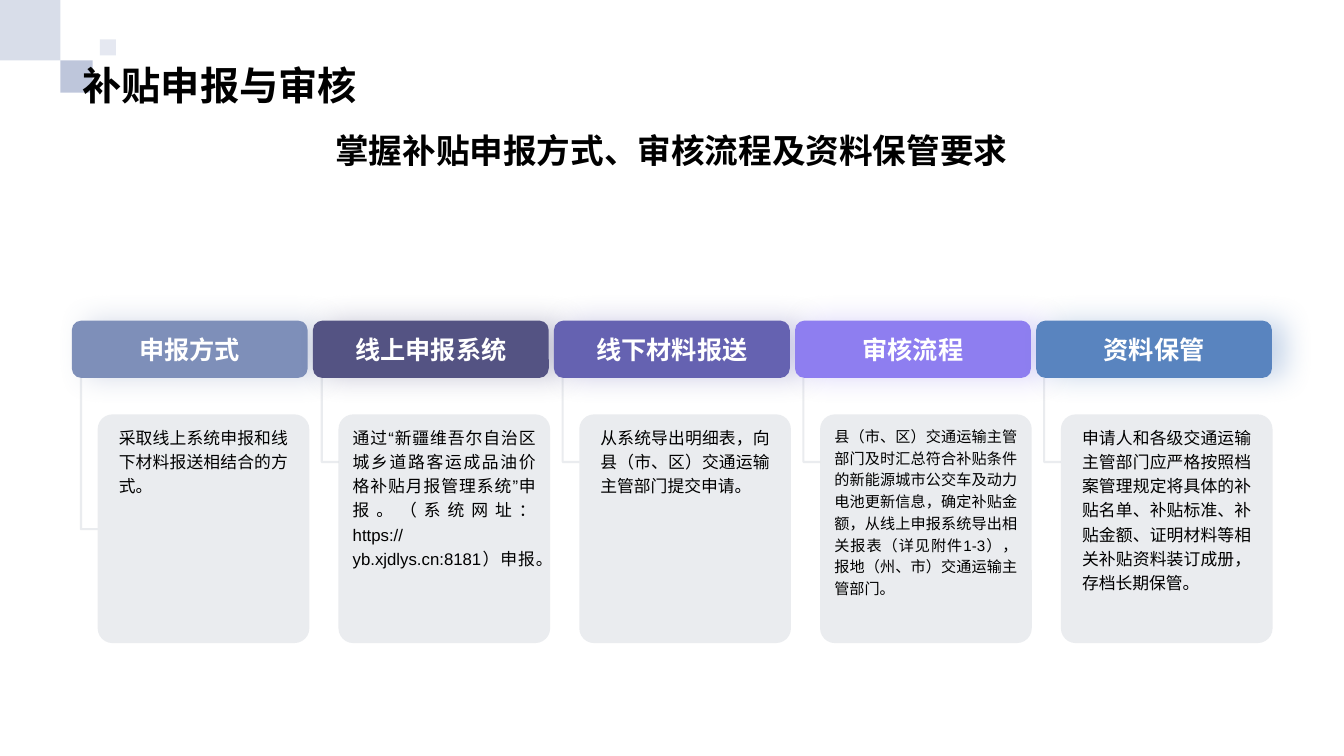
from lxml.etree import SubElement
from pptx import Presentation
from pptx.dml.color import RGBColor
from pptx.enum.shapes import MSO_CONNECTOR, MSO_SHAPE
from pptx.enum.text import MSO_ANCHOR, MSO_AUTO_SIZE, PP_ALIGN
from pptx.oxml.ns import qn
from pptx.util import Pt


def paint(color_format, color, alpha=100):
    color_format.rgb = RGBColor.from_string(color)
    if alpha < 100:
        node = color_format._xFill.find(qn("a:srgbClr"))
        SubElement(node, qn("a:alpha"), val=str(alpha * 1000))


def write(shape, text, size, color, bold, align, anchor):
    frame = shape.text_frame
    frame.word_wrap = True
    frame.auto_size = MSO_AUTO_SIZE.NONE
    frame.vertical_anchor = anchor
    para = frame.paragraphs[0]
    para.alignment = align
    span = para.add_run()
    span.text = text
    span.font.size = Pt(size)
    span.font.bold = bold
    span.font.name = "Arial"
    span.font.fill.solid()
    paint(span.font.fill.fore_color, color)
    properties = span._r.get_or_add_rPr()
    properties.set("lang", "zh-CN")
    SubElement(properties, qn("a:ea"), typeface="Arial")
    return para


deck = Presentation()
deck.slide_width = Pt(960)
deck.slide_height = Pt(540)
page = deck.slides.add_slide(deck.slide_layouts[5])
shapes = page.shapes

for left, top, side, alpha in [(0, 0, 43.2, 30), (43.2, 43.2, 23, 50), (71.3, 28.1, 11.5, 20)]:
    square = shapes.add_shape(MSO_SHAPE.RECTANGLE, Pt(left), Pt(top), Pt(side), Pt(side))
    square.shadow.inherit = False
    square.fill.solid()
    paint(square.fill.fore_color, "7E8FB9", alpha)
    square.line.fill.background()

title = shapes.title
title.left, title.top, title.width, title.height = Pt(51.8), Pt(10.1), Pt(855.4), Pt(70.6)
write(title, "补贴申报与审核", 28, "000000", True, PP_ALIGN.LEFT, MSO_ANCHOR.BOTTOM)
shapes._spTree.append(title._element)

steps = [
    ("申报方式", "7E8FB9", 108, 12, 12, "采取线上系统申报和线下材料报送相结合的方式。"),
    ("线上申报系统", "545383", 60, 12, 7.2,
     "通过“新疆维吾尔自治区城乡道路客运成品油价格补贴月报管理系统”申报。"
     "（系统网址：https://yb.xjdlys.cn:8181）申报。"),
    ("线下材料报送", "6562B1", 60, 12, 12,
     "从系统导出明细表，向县（市、区）交通运输主管部门提交申请。"),
    ("审核流程", "8E7EF0", 60, 10.8, 7.2,
     "县（市、区）交通运输主管部门及时汇总符合补贴条件的新能源城市公交车及动力电池更新信息，"
     "确定补贴金额，从线上申报系统导出相关报表（详见附件1-3），报地（州、市）交通运输主管部门。"),
    ("资料保管", "5984BF", 60, 12, 12,
     "申请人和各级交通运输主管部门应严格按照档案管理规定将具体的补贴名单、补贴标准、"
     "补贴金额、证明材料等相关补贴资料装订成册，存档长期保管。"),
]
header_bottom = 270
elbow_width = 12

for index, (name, color, drop, size, margin, detail) in enumerate(steps):
    card_left = 69.8 + 172 * index
    middle_x = card_left - elbow_width / 2
    middle_y = header_bottom + drop / 2
    elbow = shapes.add_connector(
        MSO_CONNECTOR.ELBOW,
        Pt(middle_x + drop / 2), Pt(middle_y - elbow_width / 2),
        Pt(middle_x - drop / 2), Pt(middle_y + elbow_width / 2))
    elbow.line.width = Pt(1.5)
    elbow.line.fill.solid()
    paint(elbow.line.fill.fore_color, "778495", 15)
    elbow_properties = elbow._element.spPr
    elbow_properties.find(qn("a:xfrm")).set("rot", "16200000")
    elbow_properties.find(qn("a:prstGeom")).set("prst", "bentConnector2")
    SubElement(elbow_properties, qn("a:effectLst"))

    header = shapes.add_shape(
        MSO_SHAPE.ROUNDED_RECTANGLE, Pt(51.3 + 172.2 * index), Pt(229), Pt(168.5), Pt(41))
    header.fill.solid()
    paint(header.fill.fore_color, color)
    header.line.fill.background()
    header.shadow.inherit = False
    effects = header._element.spPr.find(qn("a:effectLst"))
    shadow = SubElement(effects, qn("a:outerShdw"), blurRad=str(Pt(20)), dist=str(Pt(10)),
                        dir="0", algn="l", rotWithShape="0")
    tint = SubElement(shadow, qn("a:srgbClr"), val=color)
    SubElement(tint, qn("a:alpha"), val="32000")
    write(header, name, 18, "FFFFFF", True, PP_ALIGN.CENTER, MSO_ANCHOR.MIDDLE)

    card = shapes.add_shape(
        MSO_SHAPE.ROUNDED_RECTANGLE, Pt(card_left), Pt(296), Pt(151.2), Pt(163.4))
    card.adjustments[0] = 0.07
    card.shadow.inherit = False
    card.fill.solid()
    paint(card.fill.fore_color, "778495", 15)
    card.line.fill.background()
    card.text_frame.margin_left = card.text_frame.margin_right = Pt(margin)
    para = write(card, detail, size, "000000", False, PP_ALIGN.JUSTIFY, MSO_ANCHOR.TOP)
    para.line_spacing = 1.2

subtitle = shapes.add_textbox(Pt(51.8), Pt(89.3), Pt(855.4), Pt(65.5))
write(subtitle, "掌握补贴申报方式、审核流程及资料保管要求", 24, "000000", True,
      PP_ALIGN.CENTER, MSO_ANCHOR.TOP)

deck.save("out.pptx")
